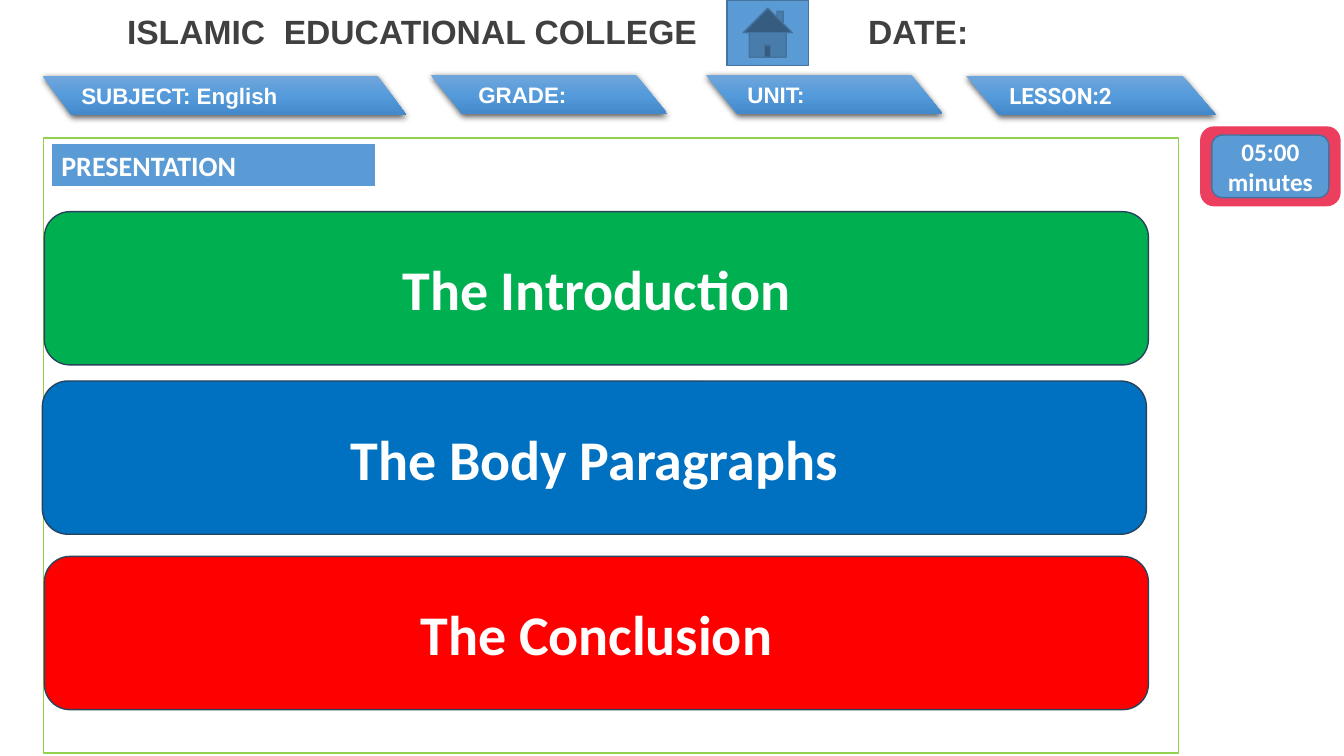
from pptx import Presentation
from pptx.dml.color import RGBColor
from pptx.enum.shapes import MSO_SHAPE
from pptx.enum.text import MSO_ANCHOR, MSO_AUTO_SIZE, PP_ALIGN
from pptx.oxml import parse_xml
from pptx.oxml.ns import nsdecls, qn
from pptx.util import Inches, Pt

RECTANGLE = MSO_SHAPE.RECTANGLE
ROUNDED = MSO_SHAPE.ROUNDED_RECTANGLE
WAVE = MSO_SHAPE.DOUBLE_WAVE
HOME = MSO_SHAPE.ACTION_BUTTON_HOME
LEFT, CENTER = PP_ALIGN.LEFT, PP_ALIGN.CENTER
TITLE_ONLY = 5

COLORS = {
    "white": "FFFFFF",
    "heading": "404040",
    "blue": "5B9BD5",
    "blue_edge": "43739E",
    "frame": "92D050",
    "timer": "EC3E5E",
    "bar_edge": "28445D",
    "introduction": "00B050",
    "body": "0070C0",
    "conclusion": "FF0000",
    "tab_top": "71A6DB",
    "tab_middle": "559BDB",
    "tab_bottom": "448ACA",
    "shadow": "000000",
}


def color(name):
    return RGBColor.from_string(COLORS[name])


def add_panel(shapes, kind, bounds, fill=None, edge=None, width=1):
    """Add a flat preset shape; bounds are left, top, width, height in inches."""
    panel = shapes.add_shape(kind, *(Inches(value) for value in bounds))
    panel.shadow.inherit = False
    if fill:
        panel.fill.solid()
        panel.fill.fore_color.rgb = color(fill)
    else:
        panel.fill.background()
    if edge:
        panel.line.color.rgb = color(edge)
        panel.line.width = Pt(width)
    else:
        panel.line.fill.background()
    return panel


def write(shape, text, size, font="Calibri", align=CENTER, ink="white"):
    frame = shape.text_frame
    frame.word_wrap = True
    frame.vertical_anchor = MSO_ANCHOR.MIDDLE
    para = frame.paragraphs[0]
    para.text = text
    para.alignment = align
    para.font.name = font
    para.font.size = Pt(size)
    para.font.bold = True
    para.font.color.rgb = color(ink)
    return para


def add_heading(page):
    heading = page.shapes.title
    heading.left, heading.top = Inches(0.51), Inches(0.05)
    heading.width, heading.height = Inches(12.67), Inches(0.52)
    heading.text_frame.auto_size = MSO_AUTO_SIZE.NONE
    heading.text_frame.margin_left = Inches(0.75)
    para = write(heading, "ISLAMIC  EDUCATIONAL COLLEGE\tDATE:", 24, "Arial", LEFT, "heading")
    tabs = parse_xml(
        f'<a:tabLst {nsdecls("a")}><a:tab pos="{Inches(7.35)}" algn="l"/></a:tabLst>'
    )
    para._p.get_or_add_pPr().insert_element_before(tabs, "a:defRPr", "a:extLst")


def add_tab(page, text, left, top, width, slant, font="Arial"):
    """Add a slanted label with a vertical gradient and a soft shadow."""
    tab = add_panel(page.shapes, WAVE, (left, top, width, 0.39))
    tab.adjustments[0], tab.adjustments[1] = 0, slant
    stops = "".join(
        f'<a:gs pos="{position}"><a:srgbClr val="{COLORS[name]}"/></a:gs>'
        for position, name in ((0, "tab_top"), (50000, "tab_middle"), (100000, "tab_bottom"))
    )
    gradient = parse_xml(
        f'<a:gradFill {nsdecls("a")} rotWithShape="1"><a:gsLst>{stops}</a:gsLst>'
        '<a:lin ang="5400000" scaled="0"/></a:gradFill>'
    )
    shadow = parse_xml(
        f'<a:outerShdw {nsdecls("a")} blurRad="{Pt(4.5)}" dist="{Pt(1.5)}" dir="5400000" '
        f'algn="ctr" rotWithShape="0"><a:srgbClr val="{COLORS["shadow"]}">'
        '<a:alpha val="63000"/></a:srgbClr></a:outerShdw>'
    )
    properties = tab._element.spPr
    properties.replace(properties.find(qn("a:noFill")), gradient)
    properties.find(qn("a:effectLst")).append(shadow)
    write(tab, text, 16, font, LEFT)


def add_timer(page):
    timer = page.shapes.add_group_shape()
    add_panel(timer.shapes, ROUNDED, (11.91, 1.26, 1.38, 0.78), "timer", "timer")
    face = add_panel(timer.shapes, ROUNDED, (12.02, 1.34, 1.16, 0.62), "blue", "blue_edge")
    write(face, "05:00 minutes", 18)


def add_bar(page, text, left, top, fill):
    bar = add_panel(page.shapes, ROUNDED, (left, top, 10.95, 1.52), fill, "bar_edge")
    write(bar, text, 40)


def main():
    deck = Presentation()
    deck.slide_width, deck.slide_height = Inches(13.33), Inches(7.5)
    page = deck.slides.add_slide(deck.slide_layouts[TITLE_ONLY])
    add_heading(page)

    add_tab(page, "LESSON:2", 9.58, 0.75, 2.48, 0.067, "Roboto")
    add_tab(page, "UNIT:", 7, 0.74, 2.35, 0.067)
    add_tab(page, " GRADE:", 4.27, 0.74, 2.35, 0.067)
    add_tab(page, "SUBJECT: English", 0.42, 0.75, 3.61, 0.04)

    add_panel(page.shapes, RECTANGLE, (0.43, 1.37, 11.26, 6.1), edge="frame")
    add_timer(page)
    add_panel(page.shapes, HOME, (7.21, 0, 0.81, 0.65), "blue", "blue_edge")
    label = add_panel(page.shapes, RECTANGLE, (0.51, 1.42, 3.22, 0.44), "blue", "white", 1.5)
    write(label, "PRESENTATION", 20, align=LEFT)

    add_bar(page, "The Introduction", 0.44, 2.1, "introduction")
    add_bar(page, "The Body Paragraphs", 0.42, 3.78, "body")
    add_bar(page, "The Conclusion", 0.44, 5.52, "conclusion")
    deck.save("out.pptx")


if __name__ == "__main__":
    main()
